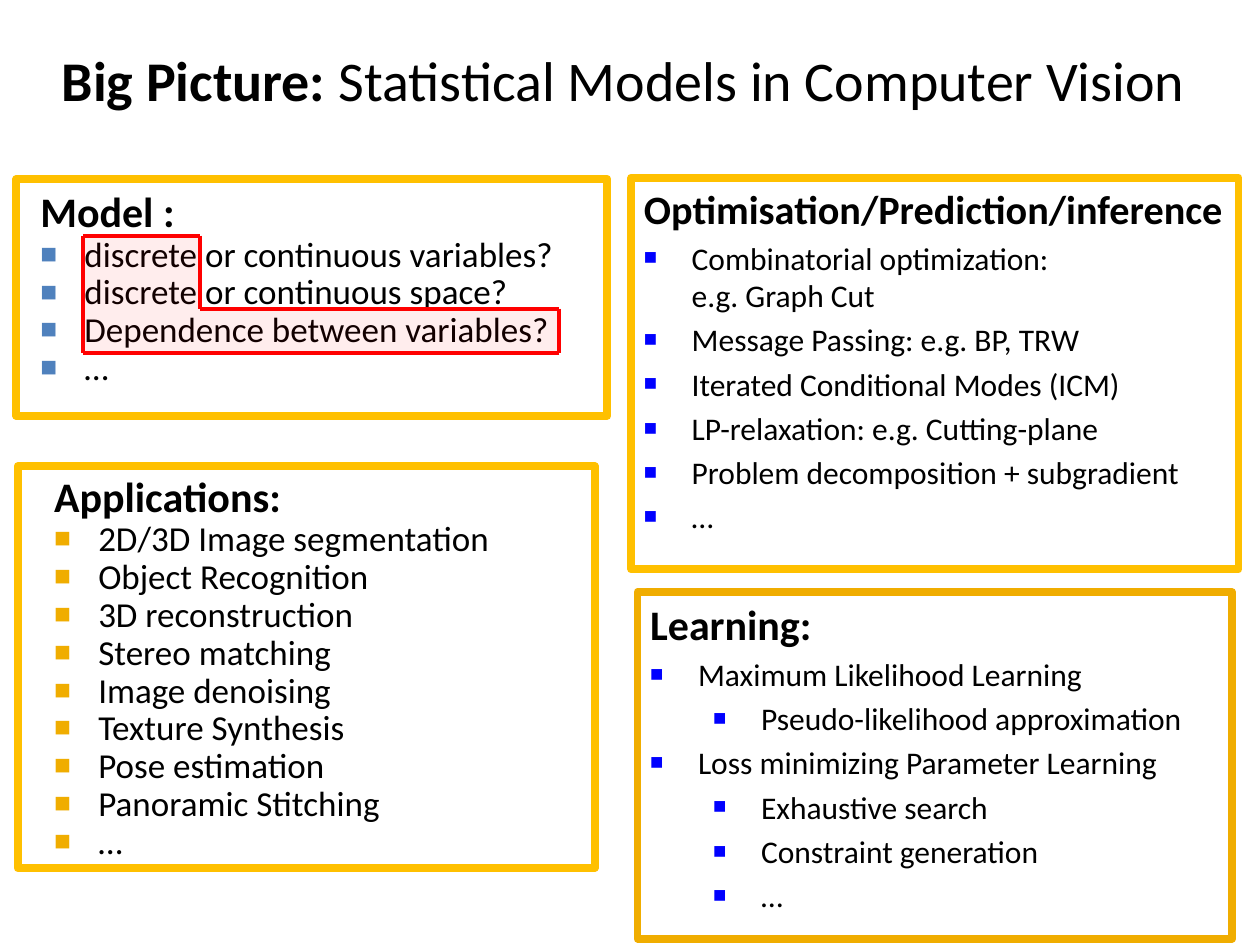
import pptx
import pptx.dml.color
import pptx.enum.shapes
import pptx.enum.text
import pptx.oxml
import pptx.oxml.ns
import pptx.util
from pptx.util import Inches, Pt

FONT = "Calibri"
BLACK, RED, TINT = "000000", "FF0000", "FF0101"
AMBER, GOLD = "FFC000", "F0AD00"
STEEL, BLUE = "4F81BD", "0000FF"


def rgb(value):
    return pptx.dml.color.RGBColor.from_string(value)


def add_child(parent, tag, **attributes):
    child = pptx.oxml.parse_xml(f"<{tag} {pptx.oxml.ns.nsdecls('a')}/>")
    for name, value in attributes.items():
        child.set(name, str(value))
    parent.append(child)
    return child


def set_indent(paragraph, left, hanging):
    properties = paragraph._p.get_or_add_pPr()
    properties.set("marL", str(Inches(left)))
    properties.set("indent", str(-Inches(hanging)))
    return properties


class SlideBuilder:
    """Holds the style and the current slide."""

    def __init__(self, slide):
        self.slide = slide

    def title(self, bold_text, plain_text):
        title = self.slide.shapes.title
        title.left, title.top = 0, 0
        title.width, title.height = Inches(10), Inches(1.25)
        paragraph = title.text_frame.paragraphs[0]
        for text, bold in ((bold_text, True), (plain_text, False)):
            run = paragraph.add_run()
            run.text = text
            run.font.bold = bold
        self.font(paragraph, 32)

    def font(self, paragraph, size, bold=None):
        font = paragraph.font
        font.name, font.size, font.bold = FONT, Pt(size), bold
        font.color.rgb = rgb(BLACK)

    def panel(self, index, box, heading, items, bullet_color, heading_size=24,
              compact=False, border=None, insets=(0.1, 0.05)):
        """Fill a body placeholder; each item is a (level, text) pair."""
        shape = self.slide.placeholders[index]
        shape.left, shape.top, shape.width, shape.height = map(Inches, box)
        if border:
            self.border(shape, border)
        frame = shape.text_frame
        frame.auto_size = pptx.enum.text.MSO_AUTO_SIZE.NONE
        frame.vertical_anchor = pptx.enum.text.MSO_ANCHOR.TOP
        frame.word_wrap = True
        frame.margin_left, frame.margin_top = map(Inches, insets)
        left, hanging = (0.48, 0.35) if compact else (0.38, 0.38)
        item_size, bullet_size = (20, 80) if compact else (18, 70)

        paragraph = frame.paragraphs[0]
        add_child(set_indent(paragraph, left, hanging), "a:buNone")
        self.fill_paragraph(paragraph, heading, heading_size, True, compact)
        for level, text in items:
            paragraph = frame.add_paragraph()
            paragraph.level = level
            properties = set_indent(paragraph, left + level / 2, hanging)
            add_child(add_child(properties, "a:buClr"), "a:srgbClr", val=bullet_color)
            add_child(properties, "a:buSzPct", val=bullet_size * 1000)
            add_child(properties, "a:buChar", char="■")
            self.fill_paragraph(paragraph, text, item_size, False, compact)

    def fill_paragraph(self, paragraph, text, size, bold, compact):
        paragraph.text = text
        self.font(paragraph, size, bold)
        if compact:
            paragraph.line_spacing = 0.9
            paragraph.space_before = Pt(0)

    def border(self, shape, color):
        shape.line.color.rgb = rgb(color)
        shape.line.width = Pt(4.5)

    def rectangle(self, box):
        shape = self.slide.shapes.add_shape(
            pptx.enum.shapes.MSO_SHAPE.RECTANGLE, *map(Inches, box))
        shape.shadow.inherit = False
        return shape

    def frame(self, box, color):
        shape = self.rectangle(box)
        shape.fill.background()
        self.border(shape, color)

    def highlight(self, box):
        shape = self.rectangle(box)
        shape.fill.solid()
        shape.fill.fore_color.rgb = rgb(TINT)
        color = shape._element.spPr.find(".//" + pptx.oxml.ns.qn("a:srgbClr"))
        add_child(color, "a:alpha", val=7000)
        shape.line.fill.background()

    def outline(self, points):
        """Join the points with lines into a closed outline."""
        for start, end in zip(points, points[1:] + points[:1]):
            line = self.slide.shapes.add_connector(
                pptx.enum.shapes.MSO_CONNECTOR.STRAIGHT, *map(Inches, start + end))
            line.line.color.rgb = rgb(RED)
            line.line.width = Pt(2.25)
            add_child(line._element.spPr, "a:effectLst")


def top_level(*texts):
    return [(0, text) for text in texts]


def main():
    presentation = pptx.Presentation()
    presentation.slide_width, presentation.slide_height = Inches(10), Inches(7.5)
    comparison_layout = presentation.slide_layouts[4]
    builder = SlideBuilder(presentation.slides.add_slide(comparison_layout))

    builder.title("Big Picture: ", "Statistical Models in Computer Vision ")
    builder.panel(
        1, (0.13, 1.42, 4.69, 1.88), "Model :",
        top_level("discrete or continuous variables?", "discrete or continuous space?",
                  "Dependence between variables?", "…"),
        STEEL, compact=True, border=AMBER, insets=(0.06, 0.1))
    builder.panel(
        2, (5.01, 1.41, 4.82, 3.11), "Optimisation/Prediction/inference",
        top_level("Combinatorial optimization: \ve.g. Graph Cut",
                  "Message Passing: e.g. BP, TRW", "Iterated Conditional Modes (ICM)",
                  "LP-relaxation: e.g. Cutting-plane",
                  "Problem decomposition + subgradient", "…"),
        BLUE, heading_size=23, border=AMBER)
    builder.panel(
        3, (0.2, 3.73, 5, 3.19), "Applications:",
        top_level("2D/3D Image segmentation", "Object Recognition", "3D reconstruction",
                  "Stereo matching", "Image denoising", "Texture Synthesis",
                  "Pose estimation", "Panoramic Stitching", "…"),
        GOLD, compact=True)
    builder.panel(
        4, (5.06, 4.7, 4.72, 2.75), "Learning:",
        [(0, "Maximum Likelihood Learning"), (1, "Pseudo-likelihood approximation"),
         (0, "Loss minimizing Parameter Learning"), (1, "Exhaustive search"),
         (1, "Constraint generation"), (1, "…")],
        BLUE, border=GOLD)
    builder.frame((0.14, 3.7, 4.58, 3.19), AMBER)

    left, notch, right = 0.66, 1.59, 4.44
    top, middle, bottom = 1.87, 2.45, 2.8
    builder.highlight((left, top, notch - left, middle - top))
    builder.highlight((left, middle, right - left, bottom - middle))
    builder.outline([(left, top), (notch, top), (notch, middle),
                     (right, middle), (right, bottom), (left, bottom)])
    presentation.save("out.pptx")


if __name__ == "__main__":
    main()
